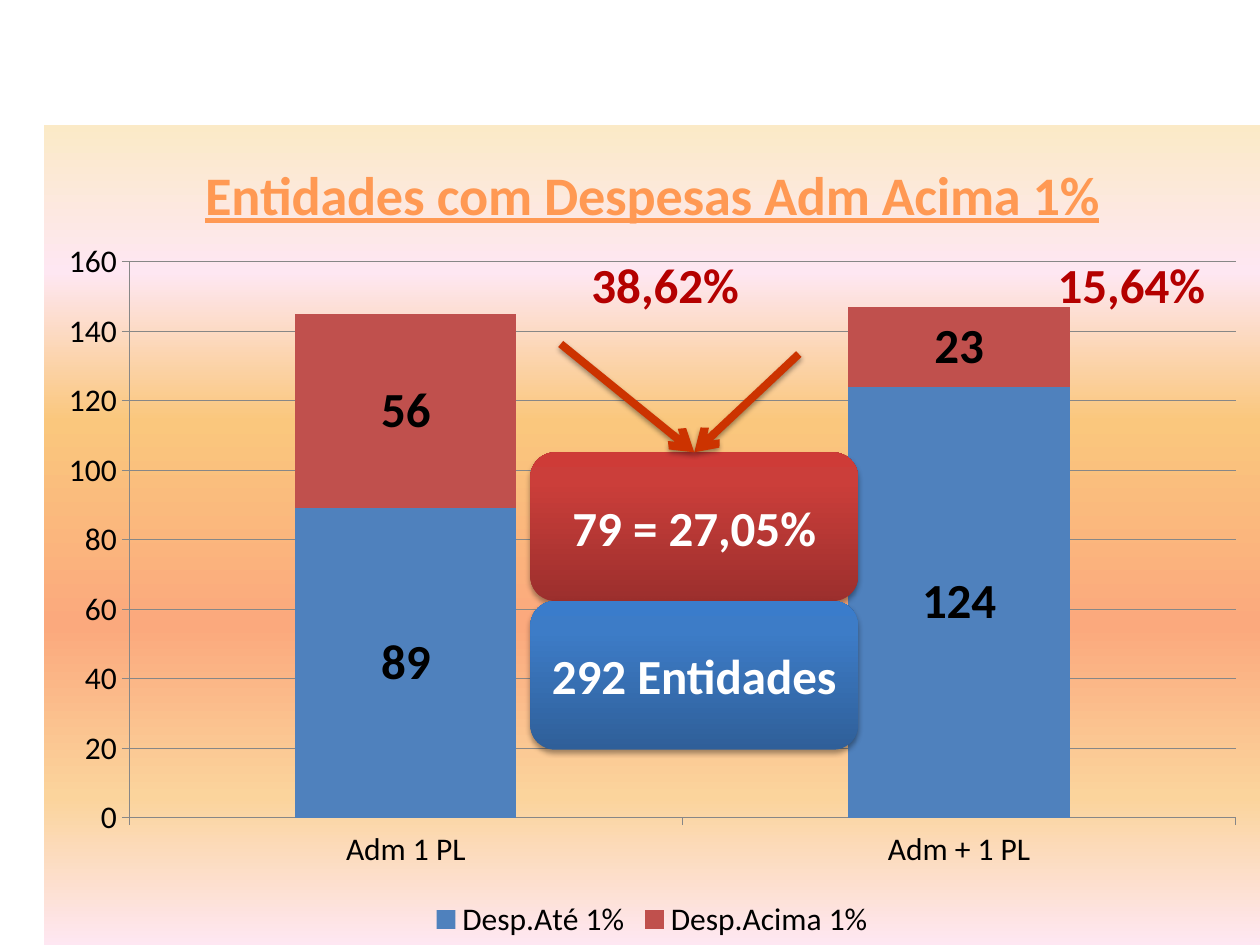
"""Build a slide with a stacked column chart, two share labels and two result boxes."""
from dataclasses import dataclass

from pptx import Presentation
from pptx.chart.data import CategoryChartData
from pptx.dml.color import RGBColor
from pptx.enum.chart import XL_CHART_TYPE, XL_LEGEND_POSITION, XL_TICK_MARK
from pptx.enum.shapes import MSO_CONNECTOR, MSO_SHAPE
from pptx.enum.text import MSO_ANCHOR, PP_ALIGN
from pptx.oxml import parse_xml
from pptx.oxml.ns import nsdecls, qn
from pptx.util import Inches, Pt

STACKED = XL_CHART_TYPE.COLUMN_STACKED
BOTTOM = XL_LEGEND_POSITION.BOTTOM
OUT = XL_TICK_MARK.OUTSIDE
ROUND = MSO_SHAPE.ROUNDED_RECTANGLE
STRAIGHT = MSO_CONNECTOR.STRAIGHT
MIDDLE, CENTER = MSO_ANCHOR.MIDDLE, PP_ALIGN.CENTER
COLS, ROWS = 100, 75


@dataclass(frozen=True)
class Theme:
    font: str = "Calibri"
    base: int = 18
    head: int = 31
    big: int = 28
    text: str = "000000"
    title: str = "FF9953"
    share: str = "B40000"
    light: str = "FFFFFF"
    grid: str = "878787"
    arrow: str = "CC3300"
    bars: tuple = ("4F81BD", "C0504D")
    dusk: tuple = ((0, "FBEAC7"), (18, "FEE7F2"), (36, "FAC77D"),
                   (61, "FBA97D"), (82, "FBD49C"), (100, "FEE7F2"))
    red: tuple = ((0, "9C2F2D"), (80, "CB3E3A"), (100, "CE3B37"))
    blue: tuple = ((0, "2F5F99"), (80, "3D7CC7"), (100, "3A7CCB"))


def blend(stops, angle):
    marks = "".join(f'<a:gs pos="{pos * 1000}"><a:srgbClr val="{color}"/></a:gs>'
                    for pos, color in stops)
    return parse_xml(f'<a:gradFill {nsdecls("a")} rotWithShape="1"><a:gsLst>{marks}</a:gsLst>'
                     f'<a:lin ang="{angle * 60000}" scaled="0"/></a:gradFill>')


def shade(alpha, dist):
    return parse_xml(
        f'<a:effectLst {nsdecls("a")}><a:outerShdw blurRad="{Pt(3.1)}" dist="{Pt(dist)}" '
        'dir="5400000" rotWithShape="0"><a:srgbClr val="000000">'
        f'<a:alpha val="{alpha * 1000}"/></a:srgbClr></a:outerShdw></a:effectLst>')


class Board:
    """Hold the theme and the current slide, and draw each kind of element."""

    def __init__(self, deck, theme):
        self.theme = theme
        self.slide = deck.slides.add_slide(deck.slide_layouts[6])
        self.col = deck.slide_width / COLS
        self.row = deck.slide_height / ROWS

    def span(self, *cells):
        units = (self.col, self.row) * 2
        return [round(cell * unit) for cell, unit in zip(cells, units)]

    def style(self, font, color, **form):
        font.color.rgb = RGBColor.from_string(color)
        for name, value in {"name": self.theme.font, **form}.items():
            setattr(font, name, value)

    def chart(self, area, title, cats, series, plot):
        theme = self.theme
        data = CategoryChartData()
        data.categories = cats
        for name, values in series.items():
            data.add_series(name, values)
        chart = self.slide.shapes.add_chart(STACKED, *self.span(*area), data).chart
        self.style(chart.font, theme.text, size=Pt(theme.base))
        self.caption(chart, title)
        self.axes(chart)
        self.columns(chart.plots[0])
        chart.has_legend = True
        chart.legend.position = BOTTOM
        chart.legend.include_in_layout = False
        self.place(chart, plot)
        back = parse_xml(f'<c:spPr {nsdecls("c", "a")}><a:ln><a:noFill/></a:ln></c:spPr>')
        back.insert(0, blend(theme.dusk, 90))
        chart.element.find(qn("c:chart")).addnext(back)

    def caption(self, chart, title):
        chart.has_title = True
        frame = chart.chart_title.text_frame
        frame.text = title
        self.style(frame.paragraphs[0].runs[0].font, self.theme.title,
                   size=Pt(self.theme.head), bold=True, underline=True)
        for mark in chart.element.xpath(".//c:title/c:overlay"):
            mark.set("val", "1")

    def axes(self, chart):
        scale = chart.value_axis
        for name, value in {"minimum_scale": 0, "maximum_scale": 160, "major_unit": 20,
                            "has_major_gridlines": True}.items():
            setattr(scale, name, value)
        for axis in (chart.category_axis, scale):
            axis.major_tick_mark = OUT
        for part in (chart.category_axis, scale, scale.major_gridlines):
            part.format.line.color.rgb = RGBColor.from_string(self.theme.grid)
            part.format.line.width = Pt(0.75)

    def columns(self, plot):
        for name, value in {"gap_width": 150, "overlap": 100,
                            "vary_by_categories": False}.items():
            setattr(plot, name, value)
        for item, color in zip(plot.series, self.theme.bars):
            item.format.fill.solid()
            item.format.fill.fore_color.rgb = RGBColor.from_string(color)
            item.data_labels.show_value = True
            self.style(item.data_labels.font, self.theme.text,
                       size=Pt(self.theme.big), bold=True)

    def place(self, chart, plot):
        area = chart.element.find(qn("c:chart")).find(qn("c:plotArea"))
        for old in area.findall(qn("c:layout")):
            area.remove(old)
        sides = "".join(f'<c:{key} val="{value}"/>' for key, value in zip("xywh", plot))
        area.insert(0, parse_xml(
            f'<c:layout {nsdecls("c")}><c:manualLayout><c:layoutTarget val="inner"/>'
            f'<c:xMode val="edge"/><c:yMode val="edge"/>{sides}</c:manualLayout></c:layout>'))

    def box(self, area, text, color, stops=None):
        shape = self.slide.shapes.add_shape(ROUND, *self.span(*area))
        shape.shadow.inherit = False
        shape.fill.background()
        shape.line.fill.background()
        if stops:
            props = shape.element.spPr
            props.replace(props.find(qn("a:noFill")), blend(stops, 270))
            props.replace(props.find(qn("a:effectLst")), shade(35, 1.8))
        frame = shape.text_frame
        for name, value in {"word_wrap": True, "vertical_anchor": MIDDLE, "margin_left": 0,
                            "margin_right": 0, "margin_top": 0, "margin_bottom": 0}.items():
            setattr(frame, name, value)
        line = frame.paragraphs[0]
        line.text = text
        line.alignment = CENTER
        self.style(line.runs[0].font, color, size=Pt(self.theme.big), bold=True)
        return shape

    def arrow(self, start, goal):
        link = self.slide.shapes.add_connector(STRAIGHT, *self.span(*start), 0, 0)
        link.end_connect(goal, 0)
        link.line.color.rgb = RGBColor.from_string(self.theme.arrow)
        link.line.width = Pt(4.5)
        props = link.element.spPr
        props.find(qn("a:ln")).append(parse_xml(f'<a:tailEnd {nsdecls("a")} type="arrow"/>'))
        props.append(shade(38, 1.6))


def main():
    deck = Presentation()
    deck.slide_width, deck.slide_height = Inches(10), Inches(7.5)
    theme = Theme()
    board = Board(deck, theme)
    board.chart((3.5, 9.9, 96.5, 65.1), "Entidades com Despesas Adm Acima 1%",
                ("Adm 1 PL", "Adm + 1 PL"),
                {"Desp.Até 1%": (89, 124), "Desp.Acima 1%": (56, 23)},
                (0.07, 0.167, 0.91, 0.678))
    for left, text in ((45.3, "38,62%"), (82.3, "15,64%")):
        board.box((left, 20.2, 15, 4.7), text, theme.share)
    left, top, wide, high = 42.1, 35.9, 26, 11.8
    total = board.box((left, top, wide, high), "79 = 27,05%", theme.light, theme.red)
    for start in ((63.4, 28.1), (44.5, 27.3)):
        board.arrow(start, total)
    board.box((left, top + high, wide, high), "292 Entidades", theme.light, theme.blue)
    deck.save("out.pptx")


if __name__ == "__main__":
    main()
